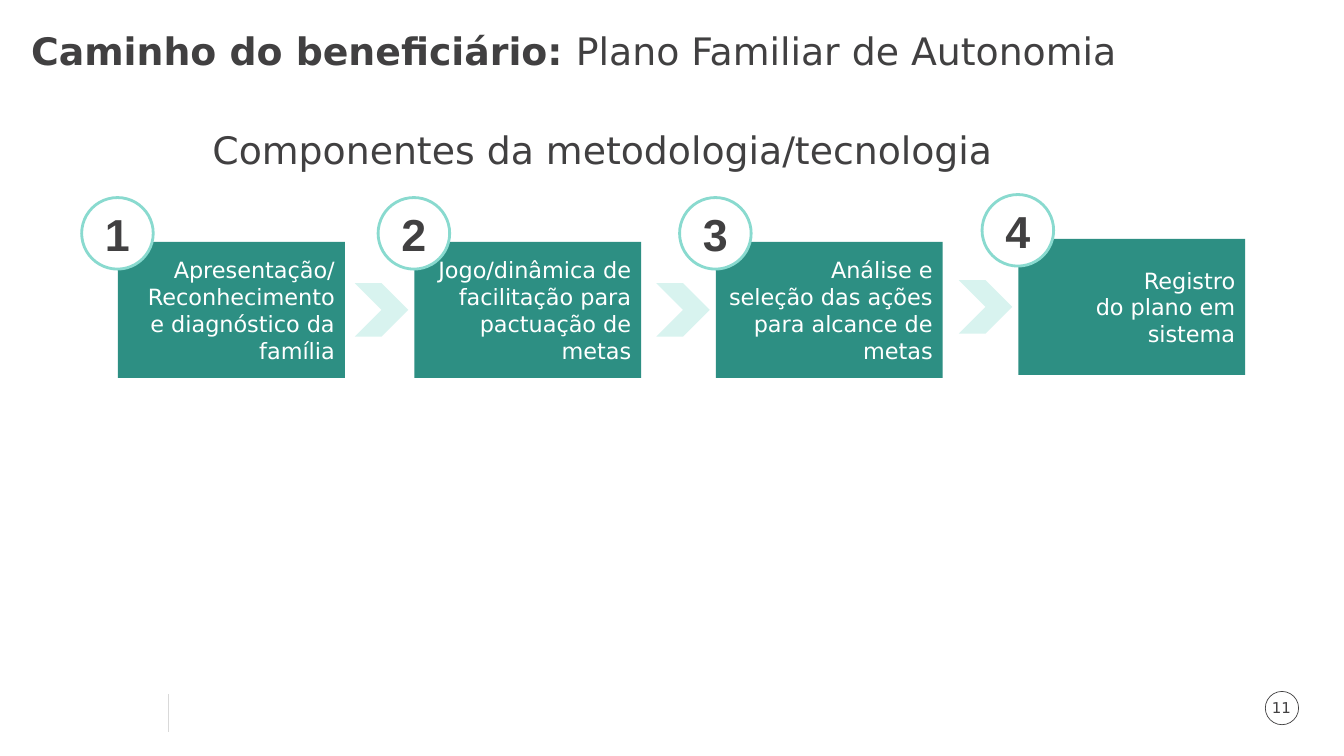
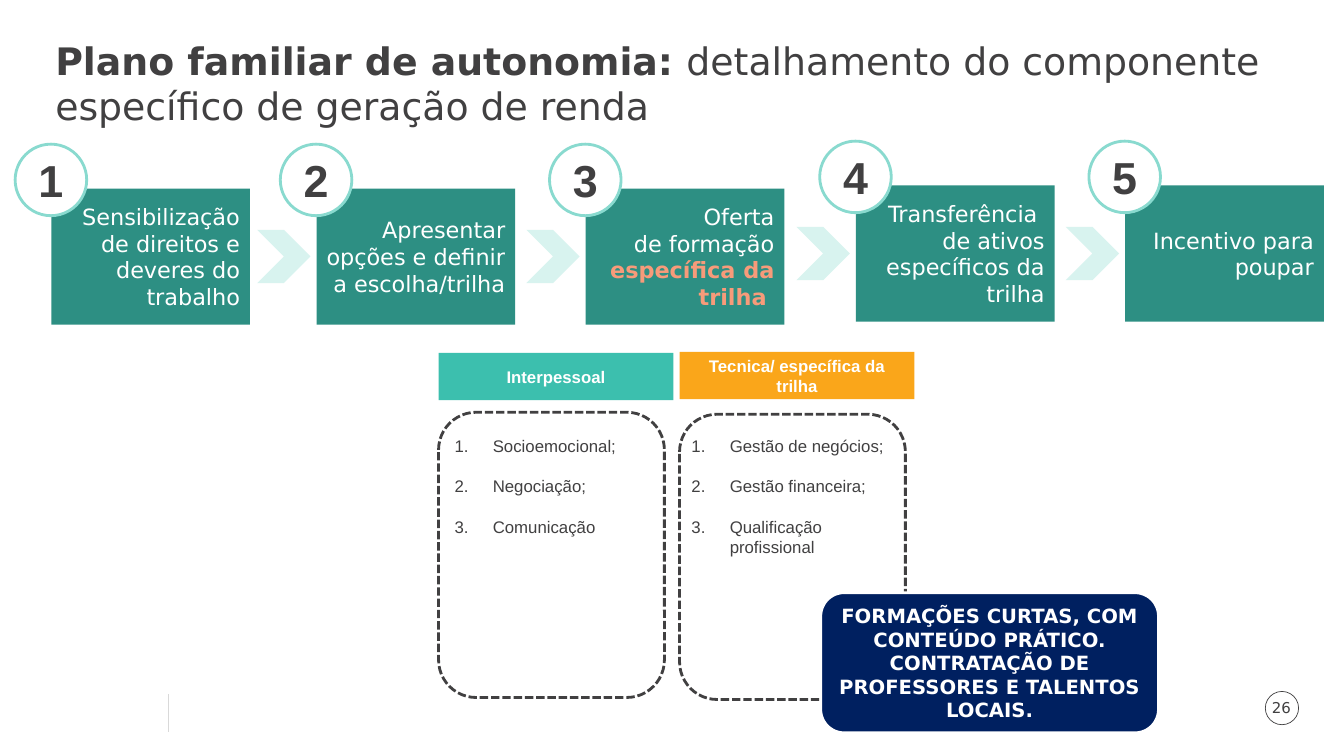
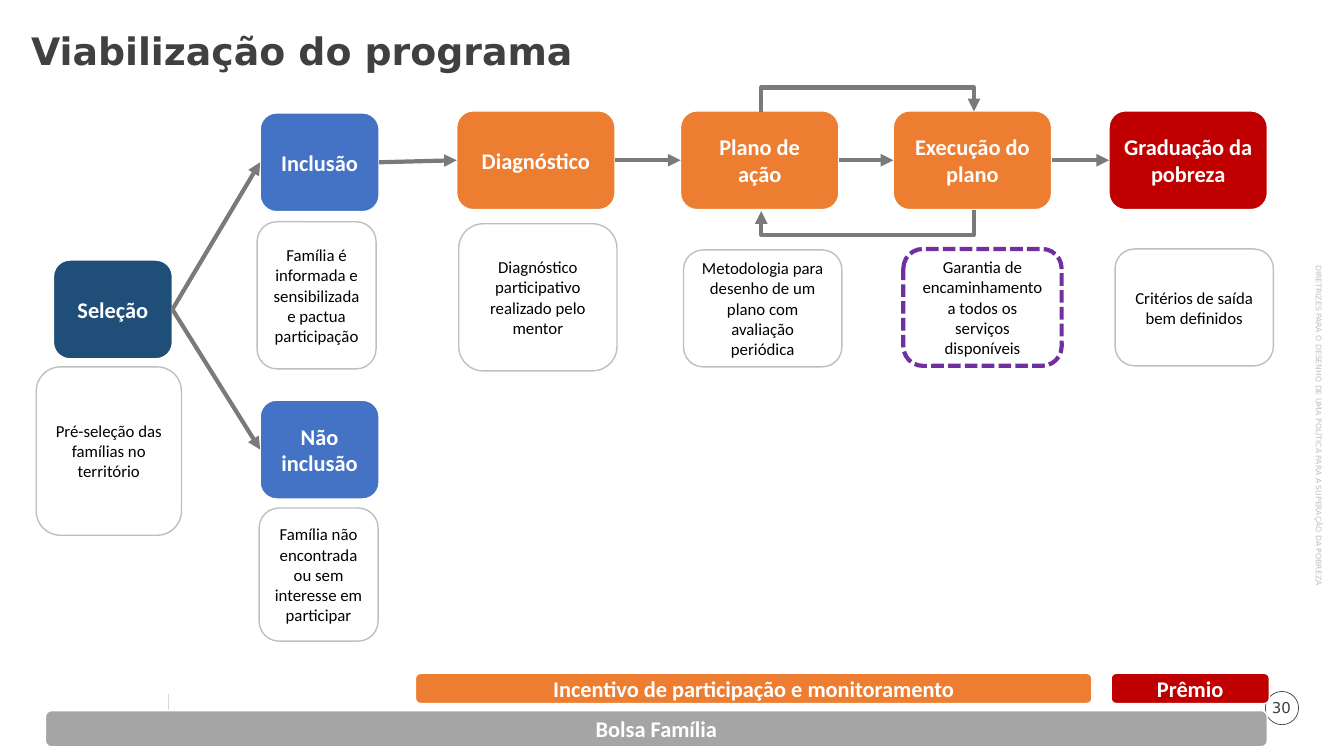
import pptx
import pptx.util
import pptx.dml.color
import pptx.enum.dml
import pptx.enum.shapes
import pptx.enum.text
import pptx.oxml.ns
from lxml import etree

Inches, Pt = pptx.util.Inches, pptx.util.Pt
SHAPE = pptx.enum.shapes.MSO_SHAPE
CONNECTOR = pptx.enum.shapes.MSO_CONNECTOR
ALIGN = pptx.enum.text.PP_ALIGN
ANCHOR = pptx.enum.text.MSO_ANCHOR
DASH = pptx.enum.dml.MSO_LINE.SQUARE_DOT
qn = pptx.oxml.ns.qn

COLORS = {
    "white": "FFFFFF", "black": "000000", "ink": "414041", "rule": "D9D9D9",
    "green": "2D8F83", "mint": "89DACF", "pale": "D8F3EF", "salmon": "F79B7A",
    "teal": "3CBFAE", "amber": "FAA61A", "deep": "002060", "navy": "1F4E79",
    "blue": "4472C4", "orange": "ED7D31", "red": "C00000", "grey": "A5A5A5",
    "silver": "BFBFBF", "arrow": "7A7A7A", "purple": "7030A0",
}

STYLES = {
    "title": dict(name="DejaVu Sans", size=27, color="ink"),
    "page": dict(name="DejaVu Sans", size=10.7, color="ink"),
    "step": dict(name="DejaVu Sans", size=16, color="white"),
    "number": dict(name="Arial", size=32, color="ink", bold=True),
    "header": dict(name="Arial", size=12, color="white", bold=True),
    "list": dict(name="Arial", size=12, color="ink"),
    "callout": dict(name="DejaVu Sans", size=14, color="white", bold=True),
    "stage": dict(name="Calibri", size=16, color="white", bold=True),
    "detail": dict(name="Calibri", size=12, color="black"),
    "side": dict(name="DejaVu Sans", size=5.5, color="silver"),
}


def rgb(name):
    return pptx.dml.color.RGBColor.from_string(COLORS[name])


class Deck:
    """Shared style and the slide being built."""

    def __init__(self):
        self.prs = pptx.Presentation()
        self.prs.slide_width, self.prs.slide_height = Inches(13.33), Inches(7.5)
        self.s = None

    # Slide with its footer
    def slide(self, page):
        self.s = self.prs.slides.add_slide(self.prs.slide_layouts[6])
        self.line((1.67, 6.89), (1.67, 7.26), "rule", 0.75)
        tf = self.text(12.47, 6.89, 0.48, 0.26, [page], "page", ALIGN.CENTER).text_frame
        for side, gap in dict(left=0.08, right=0.08, top=0.04, bottom=0.04).items():
            setattr(tf, "margin_" + side, Inches(gap))
        self.shape(SHAPE.OVAL, 12.55, 6.86, 0.33, 0.33, line=("ink", 0.5))

    # Each paragraph is a string or a list of (text, format changes)
    def fill_text(self, tf, paras, style, align):
        tf.word_wrap = True
        for i, para in enumerate(paras):
            p = tf.paragraphs[0] if i == 0 else tf.add_paragraph()
            p.alignment = align
            for text, changes in [(para, {})] if isinstance(para, str) else para:
                r = p.add_run()
                r.text = text
                for key, value in {**STYLES[style], **changes}.items():
                    if key == "color":
                        r.font.color.rgb = rgb(value)
                    else:
                        setattr(r.font, key, Pt(value) if key == "size" else value)

    def text(self, x, y, w, h, paras, style, align=ALIGN.LEFT):
        sp = self.s.shapes.add_textbox(Inches(x), Inches(y), Inches(w), Inches(h))
        self.fill_text(sp.text_frame, paras, style, align)
        return sp

    def title(self, x, y, w, h, bold, plain=""):
        runs = [(bold, dict(bold=True))] + ([(plain, {})] if plain else [])
        self.text(x, y, w, h, [runs], "title")

    def numbered(self, x, y, w, h, items):
        tf = self.text(x, y, w, h, items, "list").text_frame
        for p in tf.paragraphs:
            p.space_after = Pt(14.5)
            pPr = p._p.get_or_add_pPr()
            pPr.set("marL", str(Inches(0.38)))
            pPr.set("indent", str(-Inches(0.38)))
            etree.SubElement(pPr, qn("a:buAutoNum"), type="arabicPeriod")

    def shape(self, kind, x, y, w, h, fill=None, line=None, dash=None,
              paras=(), style="detail", align=ALIGN.CENTER):
        sp = self.s.shapes.add_shape(kind, Inches(x), Inches(y), Inches(w), Inches(h))
        sp.shadow.inherit = False
        if fill:
            sp.fill.solid()
            sp.fill.fore_color.rgb = rgb(fill)
        else:
            sp.fill.background()
        if line:
            sp.line.color.rgb, sp.line.width = rgb(line[0]), Pt(line[1])
            if dash:
                sp.line.dash_style = dash
        else:
            sp.line.fill.background()
        sp.text_frame.vertical_anchor = ANCHOR.MIDDLE
        self.fill_text(sp.text_frame, paras, style, align)
        return sp

    # Rounded flow boxes
    def stage(self, x, y, w, h, fill, text):
        return self.shape(SHAPE.ROUNDED_RECTANGLE, x, y, w, h, fill, ("white", 1),
                          paras=[text], style="stage")

    def detail(self, x, y, w, h, text, line=("silver", 1), dash=None):
        self.shape(SHAPE.ROUNDED_RECTANGLE, x, y, w, h, "white", line, dash, [text])

    # Numbered process: box, circle, and a chevron before all but the first
    def process(self, width, steps):
        for n, (x, y, paras, indent) in enumerate(steps, 1):
            sp = self.shape(SHAPE.RECTANGLE, x, y, width, 1.35, "green", paras=paras,
                            style="step", align=ALIGN.RIGHT)
            if indent:
                pPr = sp.text_frame.paragraphs[0]._p.get_or_add_pPr()
                pPr.set("indent", str(Inches(indent)))
            self.shape(SHAPE.OVAL, x - 0.36, y - 0.44, 0.71, 0.71, "white", ("mint", 2),
                       paras=[str(n)], style="number")
            if n > 1:
                self.shape(SHAPE.CHEVRON, x - 0.59, y + 0.41, 0.53, 0.53, "pale")

    # Lines and arrows
    def line(self, start, end, color, width, kind=CONNECTOR.STRAIGHT, arrow=False):
        c = self.s.shapes.add_connector(kind, *map(Inches, start + end))
        c.line.color.rgb, c.line.width = rgb(color), Pt(width)
        spPr = c._element.spPr
        if arrow:
            etree.SubElement(spPr.get_or_add_ln(), qn("a:tailEnd"), type="triangle")
        etree.SubElement(spPr, qn("a:effectLst"))
        return c

    def join(self, a, b):
        c = self.line((0, 0), (1, 1), "arrow", 3, arrow=True)
        c.begin_connect(a, 3)
        c.end_connect(b, 1)

    # U-shaped arrow between two columns, as a turned elbow 0.01 wide
    def loop(self, x1, x2, y, reach, flips=()):
        mid, half = (x1 + x2) / 2, (x2 - x1) / 2
        c = self.line((mid - 0.005, y - half), (mid + 0.005, y + half), "arrow", 3,
                      CONNECTOR.ELBOW, True)
        spPr = c._element.spPr
        xfrm = spPr.find(qn("a:xfrm"))
        xfrm.set("rot", "5400000")
        for flip in flips:
            xfrm.set(flip, "1")
        geometry = spPr.find(qn("a:prstGeom"))
        guides = geometry.find(qn("a:avLst"))
        if guides is None:
            guides = etree.SubElement(geometry, qn("a:avLst"))
        etree.SubElement(guides, qn("a:gd"), name="adj1",
                         fmla=f"val {round(reach / 0.01 * 100000)}")


def components(d):
    d.slide("11")
    d.title(0.21, 0.23, 12.07, 1.04, "Caminho do beneficiário: ",
            "Plano Familiar de Autonomia")
    d.text(0, 1.21, 12.07, 0.56, ["Componentes da metodologia/tecnologia "],
           "title", ALIGN.CENTER)
    d.process(2.25, [
        (1.17, 2.4, ["Apresentação/", "Reconhecimento e diagnóstico da família"], 0),
        (4.11, 2.4, ["Jogo/dinâmica de facilitação para pactuação de metas"], 0),
        (7.1, 2.4, ["Análise e seleção das ações para alcance de metas"], 0.95),
        (10.1, 2.37, ["Registro do plano em sistema"], 0.95),
    ])


def income(d):
    d.slide("26")
    d.title(0.45, 0.32, 12.42, 0.84, "Plano familiar de autonomia: ",
            "detalhamento do componente específico de geração de renda")
    # Training columns
    columns = [
        (4.35, 3.5, 4.09, 4.41, "teal", "Interpessoal",
         ["Socioemocional;", "Negociação;", "Comunicação"]),
        (6.74, 3.49, 4.11, 6.76, "amber", "Tecnica/ específica da trilha",
         ["Gestão de negócios;", "Gestão financeira;", "Qualificação profissional"]),
    ]
    for x, head_y, frame_y, list_x, fill, head, items in columns:
        d.shape(SHAPE.RECTANGLE, x, head_y, 2.33, 0.47, fill, paras=[head], style="header")
        d.shape(SHAPE.ROUNDED_RECTANGLE, x, frame_y, 2.24, 2.83, line=("ink", 2), dash=DASH)
        d.numbered(list_x, 4.27, 2.2, 1.31, items)
    # Steps
    highlight = dict(color="salmon", bold=True)
    d.process(1.97, [
        (0.51, 1.87, ["Sensibilização de direitos e deveres do trabalho"], 0),
        (3.14, 1.87, ["Apresentar opções e definir a escolha/trilha "], 0),
        (5.81, 1.87, [[("Oferta de formação ", {}),
                       ("específica da trilha ", highlight)]], 0.95),
        (8.49, 1.84, ["Transferência ", "de ativos específicos da trilha"], 0),
        (11.16, 1.84, ["Incentivo para poupar"], 0),
    ])
    d.shape(SHAPE.ROUNDED_RECTANGLE, 8.14, 5.88, 3.35, 1.39, "deep", ("white", 2),
            paras=["FORMAÇÕES CURTAS, COM CONTEÚDO PRÁTICO.",
                   "CONTRATAÇÃO DE PROFESSORES E TALENTOS LOCAIS."], style="callout")


def programme(d):
    d.slide("30")
    d.title(0.21, 0.23, 12.64, 1.5, "Viabilização do programa")
    side = d.text(10.49, 4.13, 5.17, 0.18, [
        "DIRETRIZES PARA O DESENHO DE UMA POLÍTICA PARA A SUPERAÇÃO DA POBREZA"],
        "side", ALIGN.CENTER)
    side.rotation = 90
    side.text_frame.paragraphs[0].line_spacing = 0.9
    # Stages
    selection, included, excluded, diagnosis, plan, execution, graduation = [
        d.stage(x, y, w, 0.98, fill, text) for x, y, w, fill, text in [
            (0.53, 2.58, 1.18, "navy", "Seleção"),
            (2.58, 1.12, 1.18, "blue", "Inclusão"),
            (2.58, 3.97, 1.18, "blue", "Não inclusão"),
            (4.53, 1.1, 1.57, "orange", "Diagnóstico"),
            (6.75, 1.1, 1.57, "orange", "Plano de ação"),
            (8.86, 1.1, 1.57, "orange", "Execução do plano"),
            (11, 1.1, 1.57, "red", "Graduação da pobreza"),
        ]]
    # Arrows
    for a, b in [(selection, included), (selection, excluded), (included, diagnosis),
                 (diagnosis, plan), (plan, execution), (execution, graduation)]:
        d.join(a, b)
    d.loop(7.55, 9.66, 2.09, 0.25)
    d.loop(7.55, 9.66, 1.11, 0.25, ("flipH", "flipV"))
    # Details
    for box in [
        (0.36, 3.64, 1.44, 1.67, "Pré-seleção das famílias no território"),
        (2.55, 2.2, 1.18, 1.46, "Família é informada e sensibilizada e pactua participação"),
        (2.57, 5.04, 1.18, 1.32, "Família não encontrada ou sem interesse em participar"),
        (4.55, 2.22, 1.57, 1.46, "Diagnóstico participativo realizado pelo mentor"),
        (6.78, 2.48, 1.57, 1.16,
         "Metodologia para desenho de um plano com avaliação periódica"),
        (8.96, 2.47, 1.57, 1.16,
         "Garantia de encaminhamento a todos os serviços disponíveis", ("purple", 3), DASH),
        (11.06, 2.47, 1.57, 1.16, "Critérios de saída bem definidos"),
    ]:
        d.detail(*box)
    # Funding bars
    d.stage(0.45, 7.05, 12.12, 0.36, "grey", "Bolsa Família")
    d.stage(4.12, 6.68, 6.71, 0.3, "orange", "Incentivo de participação e monitoramento")
    d.stage(11.02, 6.68, 1.57, 0.3, "red", "Prêmio")


def main():
    d = Deck()
    for build in (components, income, programme):
        build(d)
    d.prs.save("out.pptx")


if __name__ == "__main__":
    main()
